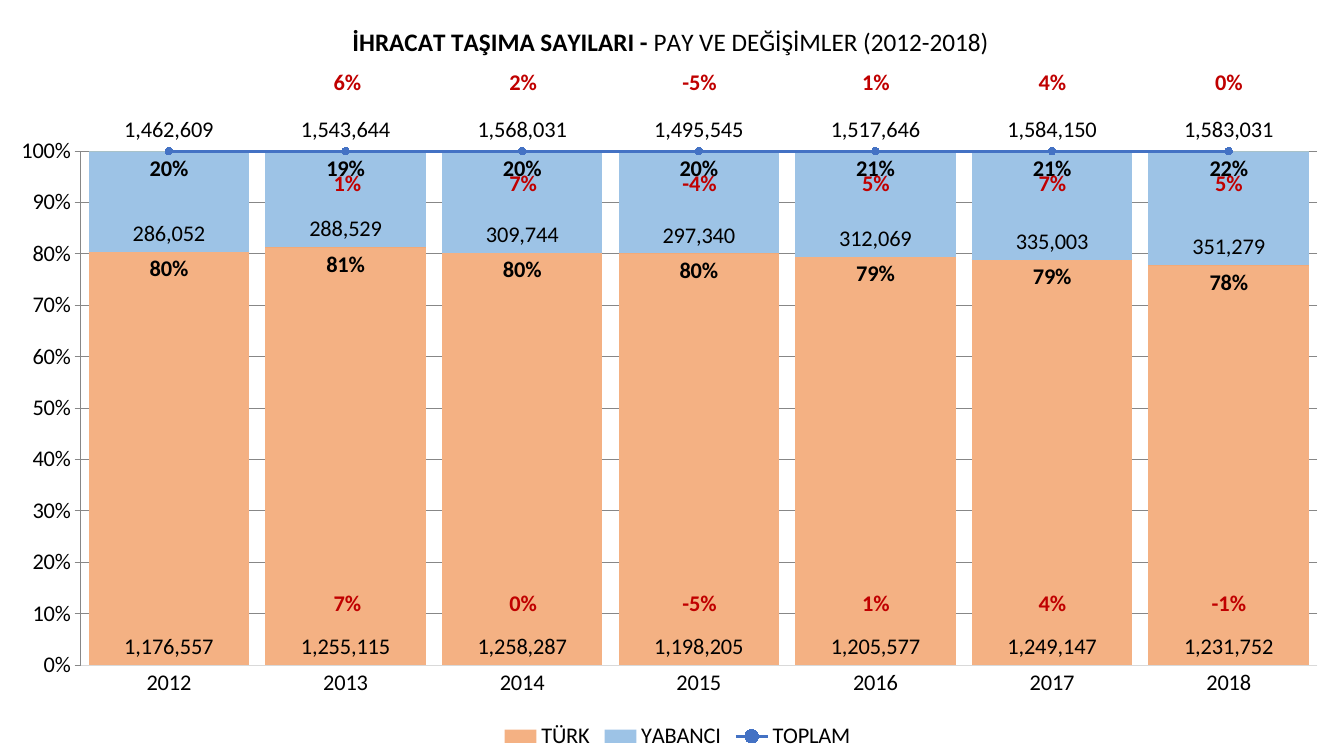
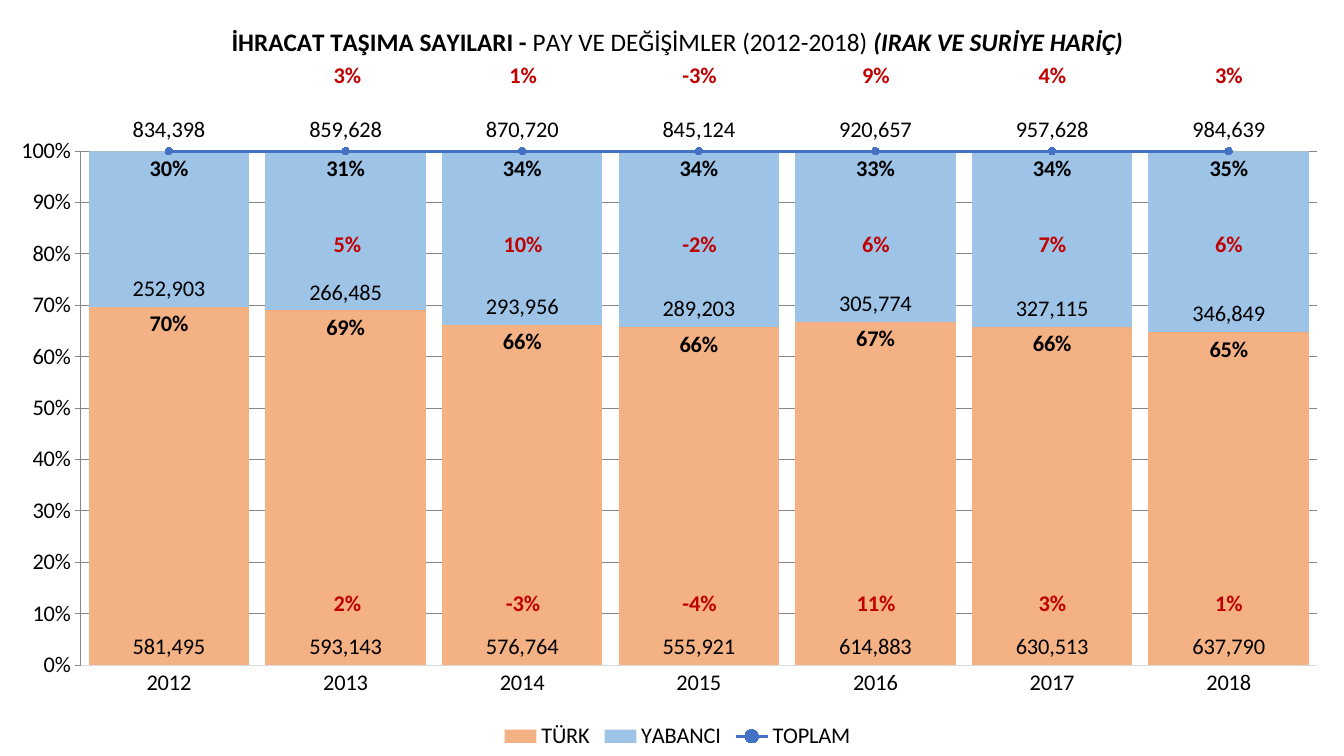
from dataclasses import dataclass

from pptx import Presentation
from pptx.chart.chart import Chart
from pptx.chart.data import CategoryChartData
from pptx.dml.color import RGBColor
from pptx.enum.chart import XL_CHART_TYPE as ChartType
from pptx.enum.chart import XL_LABEL_POSITION as LabelPos
from pptx.enum.chart import XL_LEGEND_POSITION as LegendPos
from pptx.enum.chart import XL_MARKER_STYLE as MarkerStyle
from pptx.enum.chart import XL_TICK_MARK as TickMark
from pptx.enum.text import MSO_AUTO_SIZE as AutoSize
from pptx.oxml import parse_xml
from pptx.oxml.ns import nsdecls, qn
from pptx.util import Inches, Pt


@dataclass(frozen=True)
class Theme:
    font: str = "Calibri"
    title_size: int = 18
    body_size: int = 16
    text: str = "000000"
    change: str = "C00000"
    grid: str = "D9D9D9"
    total: str = "4472C4"


@dataclass(frozen=True)
class TitlePart:
    text: str
    bold: bool = False
    italic: bool = False


@dataclass(frozen=True)
class ChangeRow:
    top: float
    values: tuple[str, ...]


@dataclass(frozen=True)
class ExportSlide:
    title: tuple[TitlePart, ...]
    title_left: float  # fraction of the chart width
    turkish: tuple[int, ...]
    foreign: tuple[int, ...]
    changes: tuple[ChangeRow, ...]


@dataclass(frozen=True)
class BarStyle:
    color: str
    position: LabelPos
    number_format: str
    bold: bool = False


THEME = Theme()
SLIDE_W, SLIDE_H = Inches(13.33), Inches(7.5)
YEARS = [str(year) for year in range(2012, 2019)]

# Change rows: first value starts the line, the rest centre on the next bars
ROW_LEFT, ROW_W, ROW_H = Inches(3.21), Inches(9.9), Inches(0.37)
FIRST_CENTRE, BAR_PITCH = 0.13, 1.75

COUNT, SHARE = "#,##0", "0%"
BARS = (
    BarStyle("F4B183", LabelPos.INSIDE_BASE, COUNT),
    BarStyle("ED7D31", LabelPos.INSIDE_END, SHARE, bold=True),
    BarStyle("9DC3E6", LabelPos.INSIDE_BASE, COUNT),
    BarStyle("FFC000", LabelPos.INSIDE_END, SHARE, bold=True),
)

HEADING = (
    TitlePart("İHRACAT TAŞIMA SAYILARI - ", bold=True),
    TitlePart("PAY VE DEĞİŞİMLER (2012-2018)"),
)

SLIDES = (
    ExportSlide(
        title=HEADING,
        title_left=0.26,
        turkish=(1176557, 1255115, 1258287, 1198205, 1205577, 1249147, 1231752),
        foreign=(286052, 288529, 309744, 297340, 312069, 335003, 351279),
        changes=(
            ChangeRow(5.8, ("7%", "0%", "-5%", "1%", "4%", "-1%")),
            ChangeRow(1.63, ("1%", "7%", "-4%", "5%", "7%", "5%")),
            ChangeRow(0.63, ("6%", "2%", "-5%", "1%", "4%", "0%")),
        ),
    ),
    ExportSlide(
        title=HEADING + (TitlePart(" (IRAK VE SURİYE HARİÇ)", bold=True, italic=True),),
        title_left=0.17,
        turkish=(581495, 593143, 576764, 555921, 614883, 630513, 637790),
        foreign=(252903, 266485, 293956, 289203, 305774, 327115, 346849),
        changes=(
            ChangeRow(5.8, ("2%", "-3%", "-4%", "11%", "3%", "1%")),
            ChangeRow(2.23, ("5%", "10%", "-2%", "6%", "7%", "6%")),
            ChangeRow(0.56, ("3%", "1%", "-3%", "9%", "4%", "3%")),
        ),
    ),
)


# Text
def style_font(font, *, size: int = THEME.body_size, color: str = THEME.text,
               bold: bool = False, italic: bool = False) -> None:
    font.name, font.size = THEME.font, Pt(size)
    font.bold, font.italic = bold, italic
    font.color.rgb = RGBColor.from_string(color)


def add_text(paragraph, text: str, **text_format) -> None:
    run = paragraph.add_run()
    run.text = text
    style_font(run.font, **text_format)


# Chart XML that python-pptx does not cover
def manual_layout(*, inner: bool = False, **fractions: float):
    target = '<c:layoutTarget val="inner"/>' if inner else ""
    modes = '<c:xMode val="edge"/><c:yMode val="edge"/>'
    places = "".join(f'<c:{key} val="{value}"/>' for key, value in fractions.items())
    return parse_xml(f'<c:layout {nsdecls("c")}><c:manualLayout>{target}{modes}{places}'
                     "</c:manualLayout></c:layout>")


def replace_layout(parent, layout, after: str | None = None) -> None:
    for old in parent.findall(qn("c:layout")):
        parent.remove(old)
    if after is None:
        parent.insert(0, layout)
    else:
        parent.findall(qn(after))[-1].addnext(layout)


def hidden_axis(tag: str, axis_id: int, cross_id: int, position: str, crosses: str):
    return parse_xml(
        f'<c:{tag} {nsdecls("c")}><c:axId val="{axis_id}"/>'
        '<c:scaling><c:orientation val="minMax"/></c:scaling><c:delete val="1"/>'
        f'<c:axPos val="{position}"/><c:majorTickMark val="none"/>'
        '<c:minorTickMark val="none"/><c:tickLblPos val="nextTo"/>'
        f'<c:crossAx val="{cross_id}"/><c:crosses val="{crosses}"/></c:{tag}>')


def move_total_to_line(chart: Chart) -> None:
    """Turn the last column series into a line on a hidden second axis."""
    plot_area = chart.element.find(".//" + qn("c:plotArea"))
    columns = plot_area.find(qn("c:barChart"))
    total = columns.findall(qn("c:ser"))[-1]
    for flag in total.findall(qn("c:invertIfNegative")):
        total.remove(flag)
    category_id, value_id = 5001, 5002
    line = parse_xml(
        f'<c:lineChart {nsdecls("c")}><c:grouping val="percentStacked"/>'
        '<c:varyColors val="0"/><c:marker val="1"/>'
        f'<c:axId val="{category_id}"/><c:axId val="{value_id}"/></c:lineChart>')
    line.insert(2, total)
    columns.addnext(line)
    last_axis = plot_area.findall(qn("c:valAx"))[-1]
    last_axis.addnext(hidden_axis("valAx", value_id, category_id, "r", "max"))
    last_axis.addnext(hidden_axis("catAx", category_id, value_id, "b", "autoZero"))


# Chart formatting
def label_series(series, position: LabelPos, number_format: str, bold: bool = False) -> None:
    labels = series.data_labels
    labels.show_value = True
    labels.position = position
    labels.number_format, labels.number_format_is_linked = number_format, False
    style_font(labels.font, bold=bold)


def format_series(chart: Chart) -> None:
    columns, line = chart.plots
    columns.gap_width, columns.overlap = 10, 100
    columns.vary_by_categories = False
    for series, bar in zip(columns.series, BARS):
        series.format.fill.solid()
        series.format.fill.fore_color.rgb = RGBColor.from_string(bar.color)
        label_series(series, bar.position, bar.number_format, bar.bold)

    total, color = line.series[0], RGBColor.from_string(THEME.total)
    total.smooth = False
    total.format.line.color.rgb = color
    total.format.line.width = Pt(2.25)
    total.marker.style, total.marker.size = MarkerStyle.CIRCLE, 5
    total.marker.format.fill.solid()
    total.marker.format.fill.fore_color.rgb = color
    total.marker.format.line.color.rgb = color
    label_series(total, LabelPos.ABOVE, COUNT)


def format_axes(chart: Chart) -> None:
    years, shares = chart.category_axis, chart.value_axis
    for axis in (years, shares):
        axis.major_tick_mark = axis.minor_tick_mark = TickMark.NONE
        style_font(axis.tick_labels.font)
    shares.tick_labels.number_format = SHARE
    shares.tick_labels.number_format_is_linked = False
    shares.format.line.fill.background()
    for rule in (years.format.line, shares.major_gridlines.format.line):
        rule.color.rgb = RGBColor.from_string(THEME.grid)
        rule.width = Pt(0.75)


def format_legend(chart: Chart) -> None:
    chart.has_legend = True
    legend = chart.legend
    legend.position, legend.include_in_layout = LegendPos.BOTTOM, False
    style_font(legend.font)
    element = legend._element
    for share_index in (3, 1):
        element.find(qn("c:legendPos")).addnext(parse_xml(
            f'<c:legendEntry {nsdecls("c")}><c:idx val="{share_index}"/>'
            '<c:delete val="1"/></c:legendEntry>'))
    replace_layout(element, manual_layout(x=0.37, y=0.95), after="c:legendEntry")


def format_title(chart: Chart, content: ExportSlide) -> None:
    chart.has_title = True
    title = chart.chart_title
    heading = title.text_frame.paragraphs[0]
    for part in content.title:
        add_text(heading, part.text, size=THEME.title_size,
                 bold=part.bold, italic=part.italic)
    title.include_in_layout = False
    replace_layout(title._element, manual_layout(x=content.title_left, y=0.03), after="c:tx")


# Slide parts
def add_export_chart(slide, content: ExportSlide) -> None:
    totals = [home + abroad for home, abroad in zip(content.turkish, content.foreign)]

    def shares(counts: tuple[int, ...]) -> list[float]:
        return [round(count / total, 2) for count, total in zip(counts, totals)]

    data = CategoryChartData()
    data.categories = YEARS
    data.add_series("TÜRK", content.turkish, COUNT)
    data.add_series("Series 2", shares(content.turkish), SHARE)
    data.add_series("YABANCI", content.foreign, COUNT)
    data.add_series("Series 4", shares(content.foreign), SHARE)
    data.add_series("TOPLAM", totals, COUNT)
    chart = slide.shapes.add_chart(
        ChartType.COLUMN_STACKED_100, 0, 0, SLIDE_W, SLIDE_H, data).chart

    style_font(chart.font)
    move_total_to_line(chart)
    format_series(chart)
    format_axes(chart)
    format_legend(chart)
    format_title(chart, content)
    replace_layout(chart.element.find(".//" + qn("c:plotArea")),
                   manual_layout(inner=True, x=0.06, y=0.2, w=0.92, h=0.68))


def add_change_row(slide, row: ChangeRow) -> None:
    frame = slide.shapes.add_textbox(ROW_LEFT, Inches(row.top), ROW_W, ROW_H).text_frame
    frame.word_wrap, frame.auto_size = True, AutoSize.SHAPE_TO_FIT_TEXT
    paragraph = frame.paragraphs[0]
    stops = "".join(
        f'<a:tab pos="{Inches(FIRST_CENTRE + BAR_PITCH * bar)}" algn="ctr"/>'
        for bar in range(1, len(row.values)))
    paragraph._p.get_or_add_pPr().append(
        parse_xml(f'<a:tabLst {nsdecls("a")}>{stops}</a:tabLst>'))
    add_text(paragraph, "\t".join(row.values), color=THEME.change, bold=True)


def main() -> None:
    deck = Presentation()
    deck.slide_width, deck.slide_height = SLIDE_W, SLIDE_H
    blank = deck.slide_layouts[6]
    for content in SLIDES:
        slide = deck.slides.add_slide(blank)
        add_export_chart(slide, content)
        for row in content.changes:
            add_change_row(slide, row)
    deck.save("out.pptx")


if __name__ == "__main__":
    main()
